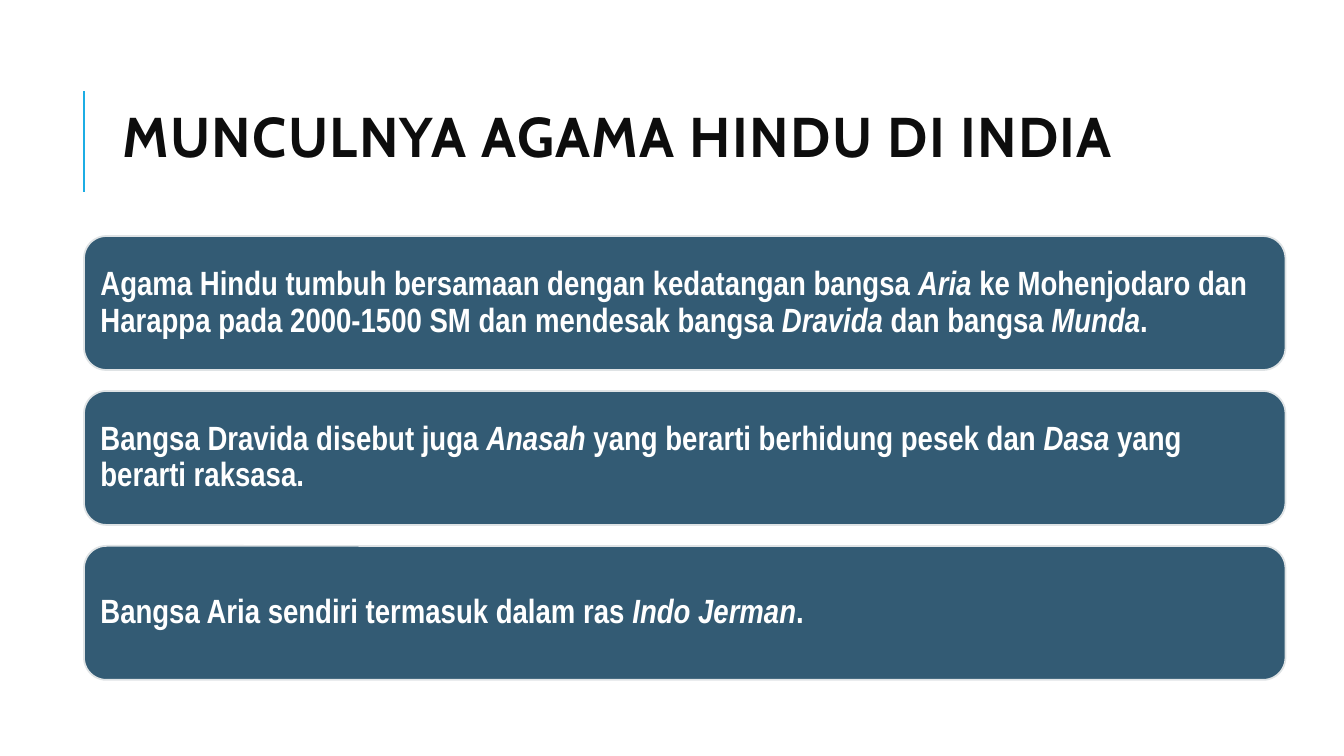
from dataclasses import dataclass
from lxml.etree import SubElement as Sub
from pptx import Presentation
from pptx.dml.color import RGBColor as RGB
from pptx.enum.shapes import MSO_CONNECTOR as Conn, MSO_SHAPE as Shape
from pptx.enum.text import MSO_ANCHOR as Anchor, PP_ALIGN as Align
from pptx.oxml.ns import qn
from pptx.util import Pt


@dataclass(frozen=True)
class Theme:
    ink: RGB = RGB(0x0D, 0x0D, 0x0D)
    white: RGB = RGB(0xFF, 0xFF, 0xFF)
    accent: RGB = RGB(0x1C, 0xAD, 0xE4)
    card: RGB = RGB(0x33, 0x5B, 0x74)
    edge: RGB = RGB(0xDF, 0xE3, 0xE5)
    head: str = "Cabin"
    body: str = "Arial Narrow"
    big: float = 40
    mid: float = 24


THEME = Theme()
TITLE = "MUNCULNYA AGAMA HINDU DI INDIA"
# Words between asterisks are italic
FACTS = [
    "Agama Hindu tumbuh bersamaan dengan kedatangan bangsa *Aria* ke Mohenjodaro dan "
    "Harappa pada 2000-1500 SM dan mendesak bangsa *Dravida* dan bangsa *Munda*.",
    "Bangsa Dravida disebut juga *Anasah* yang berarti berhidung pesek dan *Dasa* "
    "yang berarti raksasa.",
    "Bangsa Aria sendiri termasuk dalam ras *Indo Jerman*.",
]


def write(shape, text, *, font, size, color, lead, anchor, pad, track=0):
    frame = shape.text_frame
    frame.word_wrap = True
    frame.vertical_anchor = anchor
    frame.margin_left = frame.margin_right = Pt(7.2)
    frame.margin_top = frame.margin_bottom = Pt(pad)
    para = frame.paragraphs[0]
    para.alignment = Align.LEFT
    para.line_spacing = lead
    for i, part in enumerate(text.split("*")):
        run = para.add_run()
        run.text = part
        run.font.name = font
        run.font.size = Pt(size)
        run.font.bold = True
        run.font.italic = i % 2 == 1
        run.font.color.rgb = color
        if track:
            run.font._element.set("spc", str(track * 100))


def header(slide, left, top, width, height):
    # Accent rule
    rule = slide.shapes.add_connector(
        Conn.STRAIGHT, Pt(left), Pt(top + height), Pt(left), Pt(top))
    rule.line.color.rgb = THEME.accent
    rule.line.width = Pt(1.5)
    Sub(rule._element.spPr, qn("a:effectLst"))
    # Title
    box = slide.shapes.add_textbox(
        Pt(left + 20.8), Pt(top + 13), Pt(width), Pt(86.4))
    write(box, TITLE, font=THEME.head, size=THEME.big, color=THEME.ink,
          lead=0.8, anchor=Anchor.TOP, pad=4.3, track=1)


def cards(slide, left, top, width, height, gap):
    tall = (height - gap * (len(FACTS) - 1)) / len(FACTS)
    for i, fact in enumerate(FACTS):
        card = slide.shapes.add_shape(
            Shape.ROUNDED_RECTANGLE, Pt(left), Pt(top + i * (tall + gap)),
            Pt(width), Pt(tall))
        card.shadow.inherit = False
        card.fill.solid()
        card.fill.fore_color.rgb = THEME.card
        card.line.color.rgb = THEME.edge
        card.line.width = Pt(1.25)
        write(card, fact, font=THEME.body, size=THEME.mid, color=THEME.white,
              lead=0.9, anchor=Anchor.MIDDLE, pad=7.2)


def main():
    deck = Presentation()
    deck.slide_width, deck.slide_height = Pt(960), Pt(540)
    slide = deck.slides.add_slide(deck.slide_layouts[6])
    header(slide, 60, 64.8, 765.4, 72)
    cards(slide, 60, 168.6, 858.2, 317, 15)
    deck.save("out.pptx")


if __name__ == "__main__":
    main()
